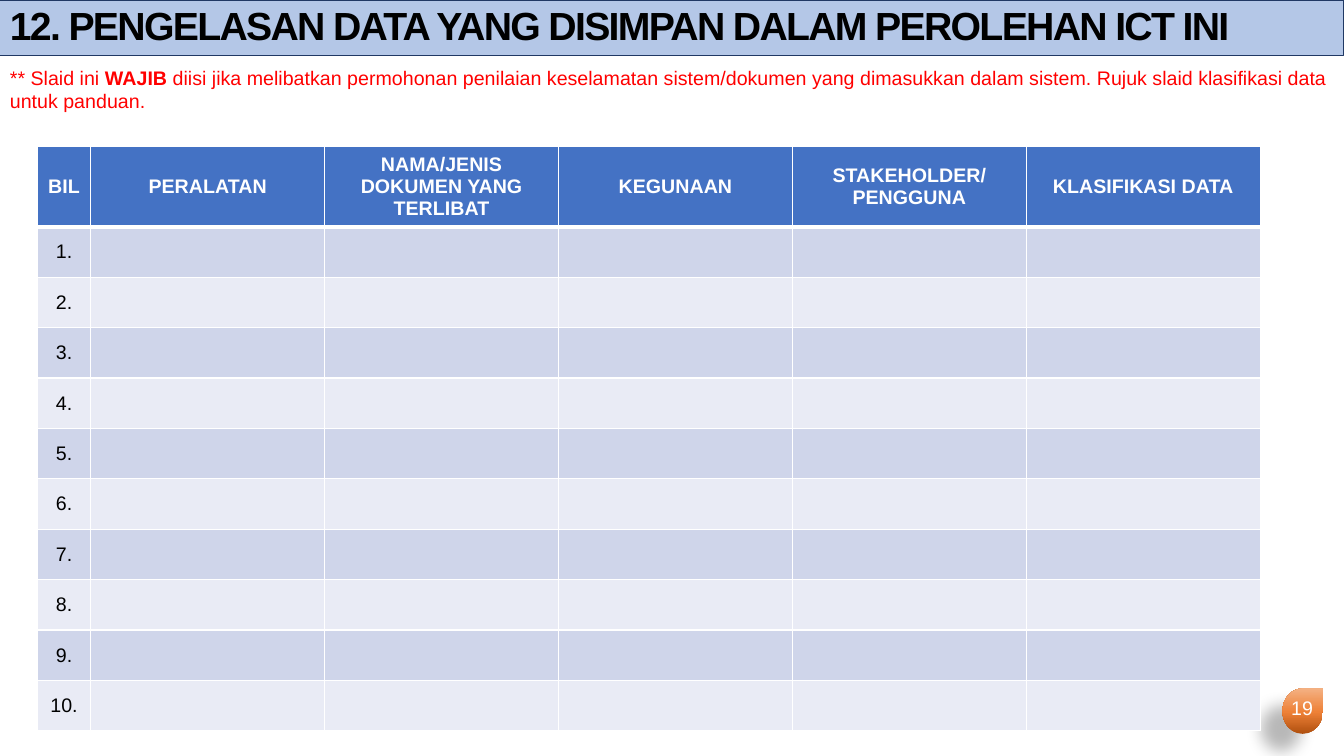
from lxml import etree
from pptx import Presentation
from pptx.dml.color import RGBColor
from pptx.enum.shapes import MSO_SHAPE
from pptx.enum.text import MSO_ANCHOR, PP_ALIGN
from pptx.oxml import parse_xml
from pptx.oxml.ns import nsdecls, qn
from pptx.util import Inches, Pt

COLOURS = {
    "black": "000000", "white": "FFFFFF", "red": "FF0000",
    "banner": "B4C7E7", "navy": "203864", "header": "4472C4",
    "odd": "CFD5EA", "even": "E9EBF5",
    "rust": "B0500F", "orange": "EE8137", "peach": "F4B183",
}
HEADINGS = ["BIL", "PERALATAN", "NAMA/JENIS DOKUMEN YANG TERLIBAT",
            "KEGUNAAN", "STAKEHOLDER/ PENGGUNA", "KLASIFIKASI DATA"]
ENTRY_COUNT = 10


class SlideBuilder:
    """Holds the text style and the current page, and adds each kind of element."""

    def __init__(self, page, font="Arial", size=14):
        self.page = page
        self.font = font
        self.size = size

    def colour(self, name):
        return RGBColor.from_string(COLOURS[name])

    def style(self, span, colour, size=None, bold=False):
        span.font.name = self.font
        span.font.size = Pt(size or self.size)
        span.font.bold = bold
        span.font.color.rgb = self.colour(colour)

    def banner(self, text, left, top, width, height):
        box = self.page.shapes.add_shape(
            MSO_SHAPE.RECTANGLE, Inches(left), Inches(top), Inches(width), Inches(height))
        box.shadow.inherit = False
        box.fill.solid()
        box.fill.fore_color.rgb = self.colour("banner")
        box.line.color.rgb = self.colour("navy")
        box.line.width = Pt(0.75)
        box.text_frame.text = text
        box.text_frame.vertical_anchor = MSO_ANCHOR.MIDDLE
        para = box.text_frame.paragraphs[0]
        para.alignment = PP_ALIGN.LEFT
        para.line_spacing = 0.9
        span = para.runs[0]
        self.style(span, "black", 28, True)
        span.font._element.set("spc", "-120")

    def text(self, parts, colour, left, top, width, height, align=PP_ALIGN.LEFT):
        box = self.page.shapes.add_textbox(
            Inches(left), Inches(top), Inches(width), Inches(height))
        box.text_frame.word_wrap = True
        para = box.text_frame.paragraphs[0]
        para.alignment = align
        for words, bold in parts:
            span = para.add_run()
            span.text = words
            self.style(span, colour, bold=bold)

    def badge(self, left, top, width, height):
        drop = self.page.shapes.add_shape(
            MSO_SHAPE.TEAR, Inches(left), Inches(top), Inches(width), Inches(height))
        drop.shadow.inherit = False
        drop.line.fill.background()
        drop.fill.gradient()
        drop.fill.gradient_angle = 90
        properties = drop._element.spPr
        stops = properties.find(qn("a:gradFill")).find(qn("a:gsLst"))
        for stop in list(stops):
            stops.remove(stop)
        for position, name in ((0, "rust"), (48, "orange"), (100, "peach")):
            stop = etree.SubElement(stops, qn("a:gs"), pos=str(position * 1000))
            etree.SubElement(stop, qn("a:srgbClr"), val=COLOURS[name])
        properties.find(qn("a:effectLst")).append(parse_xml(
            f'<a:outerShdw {nsdecls("a")} blurRad="{Pt(11.8)}" dist="{Pt(19.7)}" '
            f'dir="{141 * 60000}" algn="ctr" rotWithShape="0">'
            f'<a:srgbClr val="{COLOURS["black"]}"><a:alpha val="28000"/></a:srgbClr>'
            '</a:outerShdw>'))

    def cell(self, cell, text, fill, colour, bold, bottom):
        properties = cell._tc.get_or_add_tcPr()
        for side, width in (("L", 1), ("R", 1), ("T", 1), ("B", bottom)):
            properties.append(parse_xml(
                f'<a:ln{side} {nsdecls("a")} w="{Pt(width)}"><a:solidFill>'
                f'<a:srgbClr val="{COLOURS["white"]}"/></a:solidFill></a:ln{side}>'))
        cell.fill.solid()
        cell.fill.fore_color.rgb = self.colour(fill)
        cell.vertical_anchor = MSO_ANCHOR.MIDDLE
        cell.text_frame.text = text
        para = cell.text_frame.paragraphs[0]
        para.alignment = PP_ALIGN.CENTER
        for span in para.runs:
            self.style(span, colour, bold=bold)

    def table(self, rows, left, top, widths, heights):
        table = self.page.shapes.add_table(
            len(rows), len(widths), Inches(left), Inches(top),
            Inches(sum(widths)), Inches(sum(heights))).table
        for column, width in zip(table.columns, widths):
            column.width = Inches(width)
        for index, (row, height) in enumerate(zip(rows, heights)):
            table.rows[index].height = Inches(height)
            if index == 0:
                look = ("header", "white", True, 3)
            else:
                look = ("odd" if index % 2 else "even", "black", False, 1)
            for position, text in enumerate(row):
                self.cell(table.cell(index, position), text, *look)


def main():
    deck = Presentation()
    deck.slide_width = Inches(13.33)
    deck.slide_height = Inches(7.5)
    builder = SlideBuilder(deck.slides.add_slide(deck.slide_layouts[6]))

    builder.badge(12.72, 6.83, 0.4, 0.45)
    builder.text([("19", False)], "white", 12.67, 6.86, 0.49, 0.4, PP_ALIGN.CENTER)
    builder.text([
        ("** Slaid ini ", False),
        ("WAJIB", True),
        (" diisi jika melibatkan permohonan penilaian keselamatan sistem/dokumen yang "
         "dimasukkan dalam sistem. Rujuk slaid klasifikasi data untuk panduan.", False),
    ], "red", 0, 0.6, 13.33, 0.57)
    builder.banner("12. PENGELASAN DATA YANG DISIMPAN DALAM PEROLEHAN ICT INI",
                   0, 0, 13.33, 0.55)

    blanks = [""] * (len(HEADINGS) - 1)
    entries = [[f"{number}."] + blanks for number in range(1, ENTRY_COUNT + 1)]
    builder.table([HEADINGS] + entries, 0.37, 1.45,
                  [0.53] + [2.32] * len(blanks), [0.8] + [0.5] * ENTRY_COUNT)
    deck.save("out.pptx")


if __name__ == "__main__":
    main()
